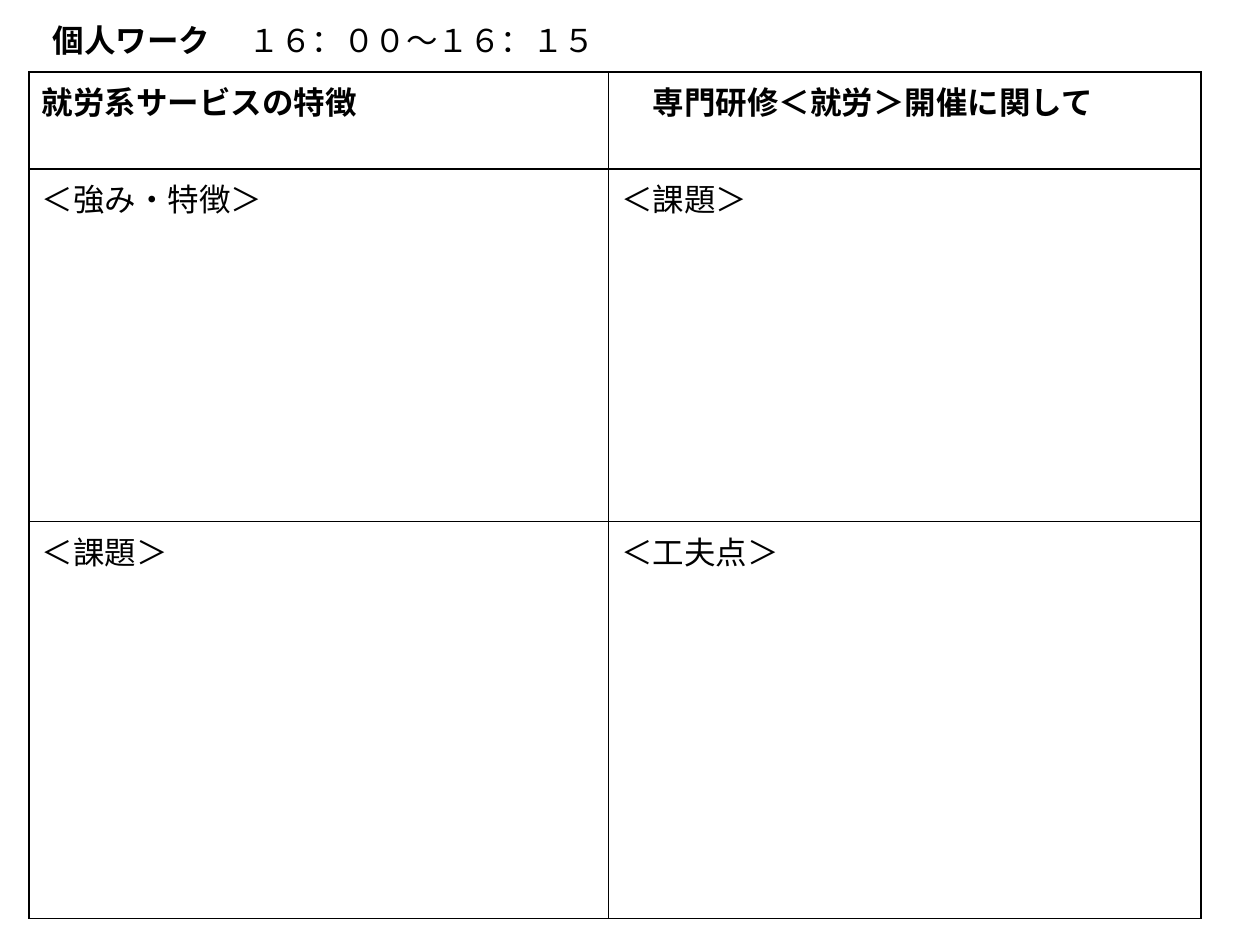
from lxml.etree import SubElement
from pptx import Presentation
from pptx.dml.color import RGBColor
from pptx.enum.text import MSO_AUTO_SIZE
from pptx.oxml.ns import qn
from pptx.util import Inches, Pt

BLACK = RGBColor(0x00, 0x00, 0x00)
FONT = "Calibri"
BORDER_WIDTH = Pt(1)

COLUMN_WIDTHS = (4.6, 4.7)
ROW_HEIGHTS = (0.77, 2.8, 3.15)
WORKSHEET = (
    ("就労系サービスの特徴", "　専門研修＜就労＞開催に関して"),
    ("＜強み・特徴＞", "＜課題＞"),
    ("＜課題＞", "＜工夫点＞"),
)


def add_span(para, text, size=18, bold=False, color=BLACK):
    span = para.add_run()
    span.text = text
    span.font.name = FONT
    span.font.size = Pt(size)
    span.font.bold = bold
    span.font.color.rgb = color


def set_borders(cell, color=BLACK):
    """Draw a solid line on all four sides of a cell."""
    properties = cell._tc.get_or_add_tcPr()
    for position, side in enumerate(("a:lnL", "a:lnR", "a:lnT", "a:lnB")):
        line = properties.makeelement(qn(side), {"w": str(BORDER_WIDTH)})
        fill = SubElement(line, qn("a:solidFill"))
        SubElement(fill, qn("a:srgbClr"), val=str(color))
        properties.insert(position, line)


def add_heading(page):
    box = page.shapes.add_textbox(Inches(0.32), Inches(0.12), Inches(5.32), Inches(0.4))
    box.text_frame.word_wrap = True
    box.text_frame.auto_size = MSO_AUTO_SIZE.SHAPE_TO_FIT_TEXT
    para = box.text_frame.paragraphs[0]
    add_span(para, "個人ワーク　", bold=True)
    add_span(para, " １６：００～１６：１５")


def add_worksheet(page):
    table = page.shapes.add_table(
        len(ROW_HEIGHTS), len(COLUMN_WIDTHS), Inches(0.23), Inches(0.57),
        Inches(sum(COLUMN_WIDTHS)), Inches(sum(ROW_HEIGHTS)),
    ).table
    table.horz_banding = False
    for column, width in zip(table.columns, COLUMN_WIDTHS):
        column.width = Inches(width)
    for index, (row, height, texts) in enumerate(zip(table.rows, ROW_HEIGHTS, WORKSHEET)):
        row.height = Inches(height)
        for cell, text in zip(row.cells, texts):
            cell.fill.background()
            set_borders(cell)
            add_span(cell.text_frame.paragraphs[0], text, bold=index == 0)


def main():
    deck = Presentation()
    deck.slide_width = Inches(10)
    deck.slide_height = Inches(7.5)
    page = deck.slides.add_slide(deck.slide_layouts[6])
    add_worksheet(page)
    add_heading(page)
    deck.save("out.pptx")


if __name__ == "__main__":
    main()
